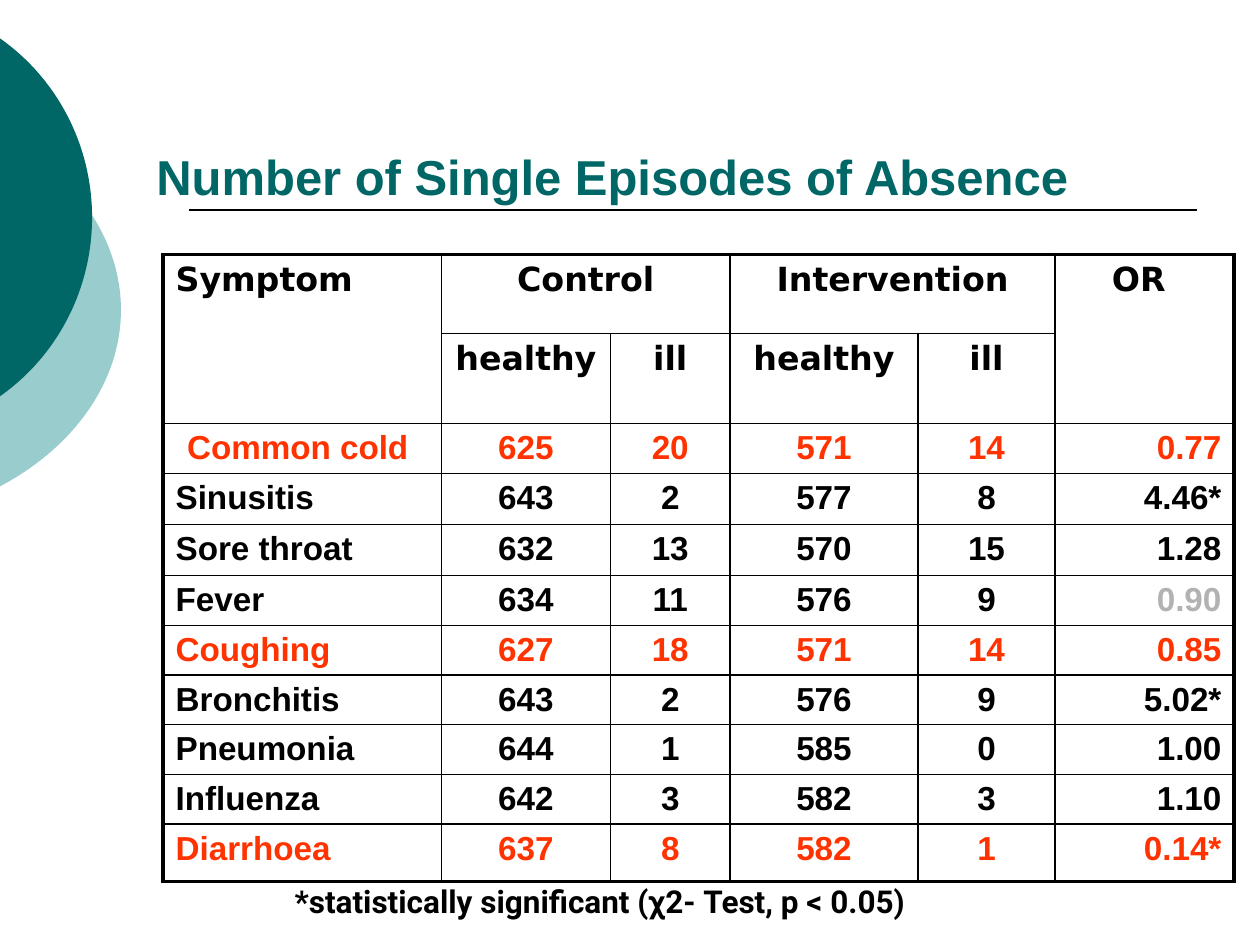
from dataclasses import dataclass

from lxml.etree import SubElement
from pptx import Presentation
from pptx.dml.color import RGBColor
from pptx.enum.shapes import MSO_CONNECTOR as Connector, MSO_SHAPE as Preset
from pptx.enum.text import MSO_ANCHOR as Anchor, PP_ALIGN as Align
from pptx.oxml.ns import qn
from pptx.util import Pt

TEAL, PALE_TEAL = "006666", "99CCCC"
BLACK, RED, GREY = "000000", "FF3300", "B2B2B2"


@dataclass
class Run:
    text: str
    size: float
    font: str = "Arial"
    color: str = BLACK
    bold: bool = True


@dataclass
class Disc:
    """Ellipse cut by the left edge of the slide."""
    color: str
    left: float
    top: float
    width: float
    height: float


@dataclass
class Symptom:
    name: str
    counts: tuple
    odds_ratio: str
    color: str = BLACK
    odds_color: str = ""
    align: Align = Align.LEFT


@dataclass
class Heading:
    text: str
    row: int
    col: int
    rows: int = 1
    cols: int = 1
    align: Align = Align.CENTER


DISCS = [
    Disc(PALE_TEAL, -254.9, 54, 324, 246.2),
    Disc(TEAL, -190.8, 0, 243.4, 248.4),
]
HEADINGS = [
    Heading("Symptom", 0, 0, rows=2, align=Align.LEFT),
    Heading("Control", 0, 1, cols=2),
    Heading("Intervention", 0, 3, cols=2),
    Heading("OR ", 0, 5, rows=2),
    Heading("healthy", 1, 1),
    Heading("ill", 1, 2),
    Heading("healthy", 1, 3),
    Heading("ill", 1, 4),
]
SYMPTOMS = [
    Symptom("Common cold ", (625, 20, 571, 14), "0.77", RED, align=Align.CENTER),
    Symptom("Sinusitis", (643, 2, 577, 8), "4.46*"),
    Symptom("Sore throat", (632, 13, 570, 15), "1.28"),
    Symptom("Fever", (634, 11, 576, 9), "0.90", odds_color=GREY),
    Symptom("Coughing", (627, 18, 571, 14), "0.85", RED),
    Symptom("Bronchitis", (643, 2, 576, 9), "5.02*"),
    Symptom("Pneumonia", (644, 1, 585, 0), "1.00"),
    Symptom("Influenza", (642, 3, 582, 3), "1.10"),
    Symptom("Diarrhoea", (637, 8, 582, 1), "0.14*", RED),
]
COLUMN_WIDTHS = [159.1, 96.5, 68.4, 107.3, 78.5, 102.2]
ROW_HEIGHTS = [45.2, 51.4, 28.6, 29.2, 29.2] + [28.4] * 5 + [33]
TABLE_SIZE = 19


def rgb(color: str) -> RGBColor:
    return RGBColor.from_string(color)


def write(frame, runs: list[Run], align: Align) -> None:
    paragraph = frame.paragraphs[0]
    paragraph.alignment = align
    for item in runs:
        run = paragraph.add_run()
        run.text = item.text
        run.font.size = Pt(item.size)
        run.font.name = item.font
        run.font.bold = item.bold
        run.font.color.rgb = rgb(item.color)


def draw_text(slide, left: float, top: float, width: float, height: float,
              runs: list[Run], anchor: Anchor, align: Align) -> None:
    frame = slide.shapes.add_textbox(Pt(left), Pt(top), Pt(width), Pt(height)).text_frame
    frame.word_wrap = True
    frame.vertical_anchor = anchor
    write(frame, runs, align)


def draw_disc(slide, disc: Disc) -> None:
    shape = slide.shapes.add_shape(Preset.OVAL, Pt(disc.left), Pt(disc.top),
                                   Pt(disc.width), Pt(disc.height))
    shape.shadow.inherit = False
    shape.fill.solid()
    shape.fill.fore_color.rgb = rgb(disc.color)
    shape.line.fill.background()


def draw_rule(slide, left: float, right: float, y: float) -> None:
    rule = slide.shapes.add_connector(Connector.STRAIGHT, Pt(left), Pt(y), Pt(right), Pt(y))
    rule.line.color.rgb = rgb(BLACK)
    rule.line.width = Pt(1)
    SubElement(rule._element.spPr, qn("a:effectLst"))


def style_cell(cell, row: int, col: int) -> None:
    """Thick border on the outside of the table, thin border inside."""
    outer_sides = {
        "L": col == 0,
        "R": col == len(COLUMN_WIDTHS) - 1,
        "T": row == 0,
        "B": row == len(ROW_HEIGHTS) - 1,
    }
    properties = cell._tc.get_or_add_tcPr()
    for side, outer in outer_sides.items():
        border = SubElement(properties, qn(f"a:ln{side}"), w=str(Pt(2.25 if outer else 1)))
        fill = SubElement(border, qn("a:solidFill"))
        SubElement(fill, qn("a:srgbClr"), val=BLACK)
    cell.fill.background()
    cell.margin_top, cell.margin_bottom = Pt(3.5), Pt(1.5)


def draw_table(slide, left: float, top: float) -> None:
    table = slide.shapes.add_table(
        len(ROW_HEIGHTS), len(COLUMN_WIDTHS), Pt(left), Pt(top),
        Pt(sum(COLUMN_WIDTHS)), Pt(sum(ROW_HEIGHTS))).table
    table.first_row = table.horz_banding = False
    for column, width in zip(table.columns, COLUMN_WIDTHS):
        column.width = Pt(width)
    for row, height in zip(table.rows, ROW_HEIGHTS):
        row.height = Pt(height)
    for row in range(len(ROW_HEIGHTS)):
        for col in range(len(COLUMN_WIDTHS)):
            style_cell(table.cell(row, col), row, col)

    # Two heading rows
    for heading in HEADINGS:
        cell = table.cell(heading.row, heading.col)
        if heading.rows * heading.cols > 1:
            cell.merge(table.cell(heading.row + heading.rows - 1,
                                  heading.col + heading.cols - 1))
        write(cell.text_frame, [Run(heading.text, TABLE_SIZE, "DejaVu Sans")], heading.align)

    # One row per symptom
    for row, symptom in enumerate(SYMPTOMS, start=2):
        entries = [(symptom.name, symptom.align, symptom.color)]
        entries += [(str(n), Align.CENTER, symptom.color) for n in symptom.counts]
        entries.append((symptom.odds_ratio, Align.RIGHT, symptom.odds_color or symptom.color))
        for col, (text, align, color) in enumerate(entries):
            write(table.cell(row, col).text_frame,
                  [Run(text, TABLE_SIZE, color=color)], align)


def main() -> None:
    deck = Presentation()
    deck.slide_width, deck.slide_height = Pt(720), Pt(540)
    slide = deck.slides.add_slide(deck.slide_layouts[6])

    # Decoration on the left and rule below the title
    for disc in DISCS:
        draw_disc(slide, disc)
    draw_rule(slide, 108, 684, 120)

    # Title, table and footnote
    title = [Run("Number of Single Episodes of Absence", 28, color=TEAL),
             Run(" ", 36, color=TEAL, bold=False)]
    draw_text(slide, 82.3, 16.5, 622, 106, title, Anchor.BOTTOM, Align.LEFT)
    draw_table(slide, 93.2, 145.4)
    footnote = [Run("*statistically significant (χ2- Test, p < 0.05)", 18, "Roboto")]
    draw_text(slide, 161.3, 500.4, 521.3, 29, footnote, Anchor.MIDDLE, Align.JUSTIFY)

    deck.save("out.pptx")


if __name__ == "__main__":
    main()
